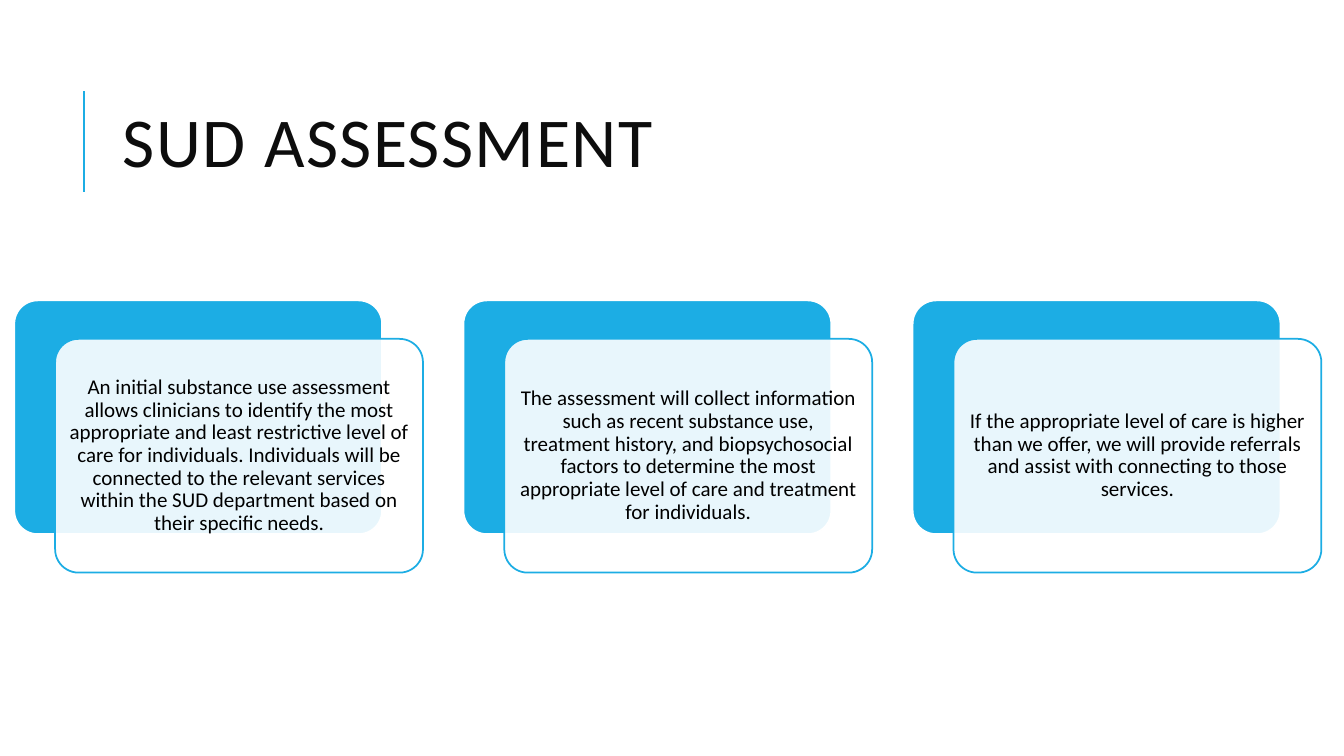
from lxml import etree
from pptx import Presentation
from pptx.dml.color import RGBColor
from pptx.enum.shapes import MSO_CONNECTOR, MSO_SHAPE
from pptx.enum.text import MSO_ANCHOR, PP_ALIGN
from pptx.oxml.ns import qn
from pptx.util import Cm, Pt

# Content
TITLE = "SUD ASSESSMENT"
CARDS = [
    "An initial substance use assessment allows clinicians to identify the most "
    "appropriate and least restrictive level of care for individuals. Individuals "
    "will be connected to the relevant services within the SUD department based on "
    "their specific needs.",
    "The assessment will collect information such as recent substance use, treatment "
    "history, and biopsychosocial factors to determine the most appropriate level of "
    "care and treatment for individuals.",
    "If the appropriate level of care is higher than we offer, we will provide "
    "referrals and assist with connecting to those services.",
]
BLUE, WHITE, BLACK, INK = "1CADE4", "FFFFFF", "000000", "0D0D0D"

# Card layout in cm
LEFT, TOP = 0.36, 7.57
WIDE, HIGH = 9.27, 5.89
PITCH = 11.32
SHIFT_X, SHIFT_Y = 1.03, 0.97


def color(code):
    return RGBColor.from_string(code)


def write(shape, text, size, ink, align=PP_ALIGN.LEFT, lines=1.0, inset=None, track=0):
    frame = shape.text_frame
    frame.word_wrap = True
    frame.vertical_anchor = MSO_ANCHOR.MIDDLE
    if inset is not None:
        frame.margin_left = frame.margin_right = Cm(inset)
        frame.margin_top = frame.margin_bottom = Cm(inset)
    para = frame.paragraphs[0]
    para.alignment, para.line_spacing = align, lines
    run = para.add_run()
    run.text = text
    run.font.name, run.font.size = "Calibri", Pt(size)
    run.font.color.rgb = color(ink)
    if track:
        run.font._element.set("spc", str(track * 100))


def panel(x, y, fill, line, alpha=None):
    shape = slide.shapes.add_shape(
        MSO_SHAPE.ROUNDED_RECTANGLE, Cm(x), Cm(y), Cm(WIDE), Cm(HIGH))
    shape.adjustments[0] = 0.1
    shape.shadow.inherit = False
    shape.fill.solid()
    shape.fill.fore_color.rgb = color(fill)
    shape.line.color.rgb = color(line)
    shape.line.width = Pt(1.25)
    if alpha:
        tint = shape._element.spPr.find(qn("a:solidFill"))[0]
        etree.SubElement(tint, qn("a:alpha")).set("val", str(alpha * 1000))
    return shape


deck = Presentation()
deck.slide_width, deck.slide_height = Cm(33.87), Cm(19.05)
slide = deck.slides.add_slide(deck.slide_layouts[5])

# Title with the rule at its left
title = slide.shapes.title
title.left, title.top, title.width, title.height = Cm(2.84), Cm(1.63), Cm(27), Cm(4.17)
write(title, TITLE, 50, INK, lines=0.8, track=1)
rule = slide.shapes.add_connector(
    MSO_CONNECTOR.STRAIGHT, Cm(2.12), Cm(4.83), Cm(2.12), Cm(2.29))
rule.line.color.rgb = color(BLUE)
rule.line.width = Pt(1.5)
etree.SubElement(rule._element.spPr, qn("a:effectLst"))

# Cards: a blue panel behind a translucent one that holds the text
for i, text in enumerate(CARDS):
    x = LEFT + i * PITCH
    panel(x, TOP, BLUE, WHITE)
    front = panel(x + SHIFT_X, TOP + SHIFT_Y, WHITE, BLUE, alpha=90)
    write(front, text, 15, BLACK, align=PP_ALIGN.CENTER, lines=0.9, inset=0.15)

deck.save("out.pptx")
